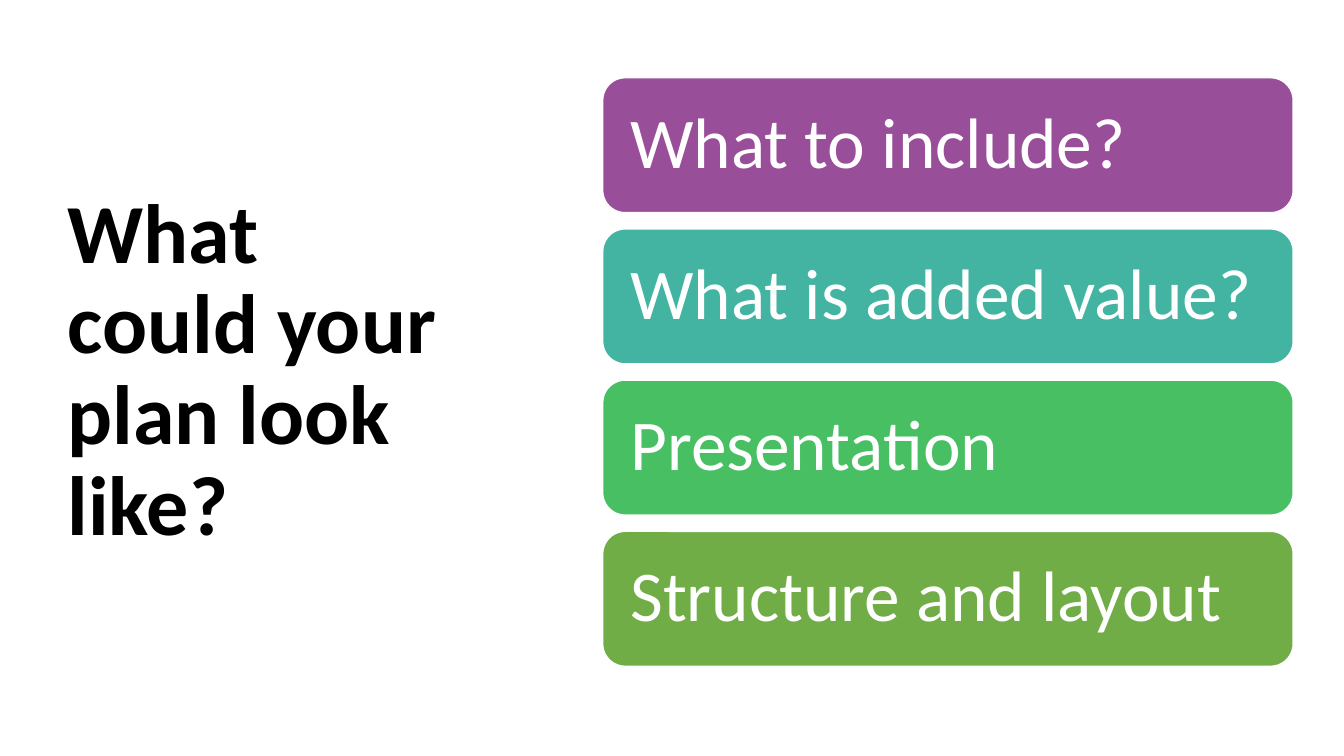
from dataclasses import dataclass

from pptx import Presentation
from pptx.dml.color import RGBColor
from pptx.enum import shapes, text
from pptx.util import Cm, Pt


@dataclass(frozen=True)
class Theme:
    font: str = "Calibri"
    title_size: int = 60
    card_size: int = 51
    ink: str = "000000"
    paper: str = "FFFFFF"
    cards: tuple = ("994E99", "42B4A1", "49BF64", "70AD47")


THEME = Theme()
TOPICS = (
    "What to include?",
    "What is added value?",
    "Presentation",
    "Structure and layout",
)
CARD_LEFT, CARD_TOP = 15.19, 1.96
CARD_WIDTH, CARD_HEIGHT = 17.4, 3.4
CARD_PITCH = 3.81
CARD_INSET = 0.53


def write(frame, wording, size, color, bold=False):
    frame.text = wording
    frame.word_wrap = True
    frame.auto_size = text.MSO_AUTO_SIZE.NONE
    frame.vertical_anchor = text.MSO_ANCHOR.MIDDLE
    para = frame.paragraphs[0]
    para.alignment = text.PP_ALIGN.LEFT
    para.line_spacing = 0.9
    for span in para.runs:
        span.font.name = THEME.font
        span.font.size = Pt(size)
        span.font.bold = bold
        span.font.color.rgb = RGBColor.from_string(color)


def set_title(page, wording):
    title = page.shapes.title
    title.left, title.top = Cm(1.45), Cm(1.73)
    title.width, title.height = Cm(10.57), Cm(15.29)
    title.text_frame.margin_right = Cm(0.5)
    write(title.text_frame, wording, THEME.title_size, THEME.ink, bold=True)


def add_card(page, top, wording, color):
    card = page.shapes.add_shape(
        shapes.MSO_SHAPE.ROUNDED_RECTANGLE,
        Cm(CARD_LEFT), Cm(top), Cm(CARD_WIDTH), Cm(CARD_HEIGHT),
    )
    card.shadow.inherit = False
    card.fill.solid()
    card.fill.fore_color.rgb = RGBColor.from_string(color)
    card.line.color.rgb = RGBColor.from_string(THEME.paper)
    card.line.width = Pt(1)
    frame = card.text_frame
    frame.margin_left = frame.margin_right = Cm(CARD_INSET)
    frame.margin_top = frame.margin_bottom = Cm(CARD_INSET)
    write(frame, wording, THEME.card_size, THEME.paper)


def main():
    deck = Presentation()
    deck.slide_width, deck.slide_height = Cm(33.87), Cm(19.05)
    page = deck.slides.add_slide(deck.slide_layouts.get_by_name("Title Only"))
    set_title(page, "What could your plan look like?")
    for row, (topic, color) in enumerate(zip(TOPICS, THEME.cards)):
        add_card(page, CARD_TOP + row * CARD_PITCH, topic, color)
    deck.save("out.pptx")


if __name__ == "__main__":
    main()
